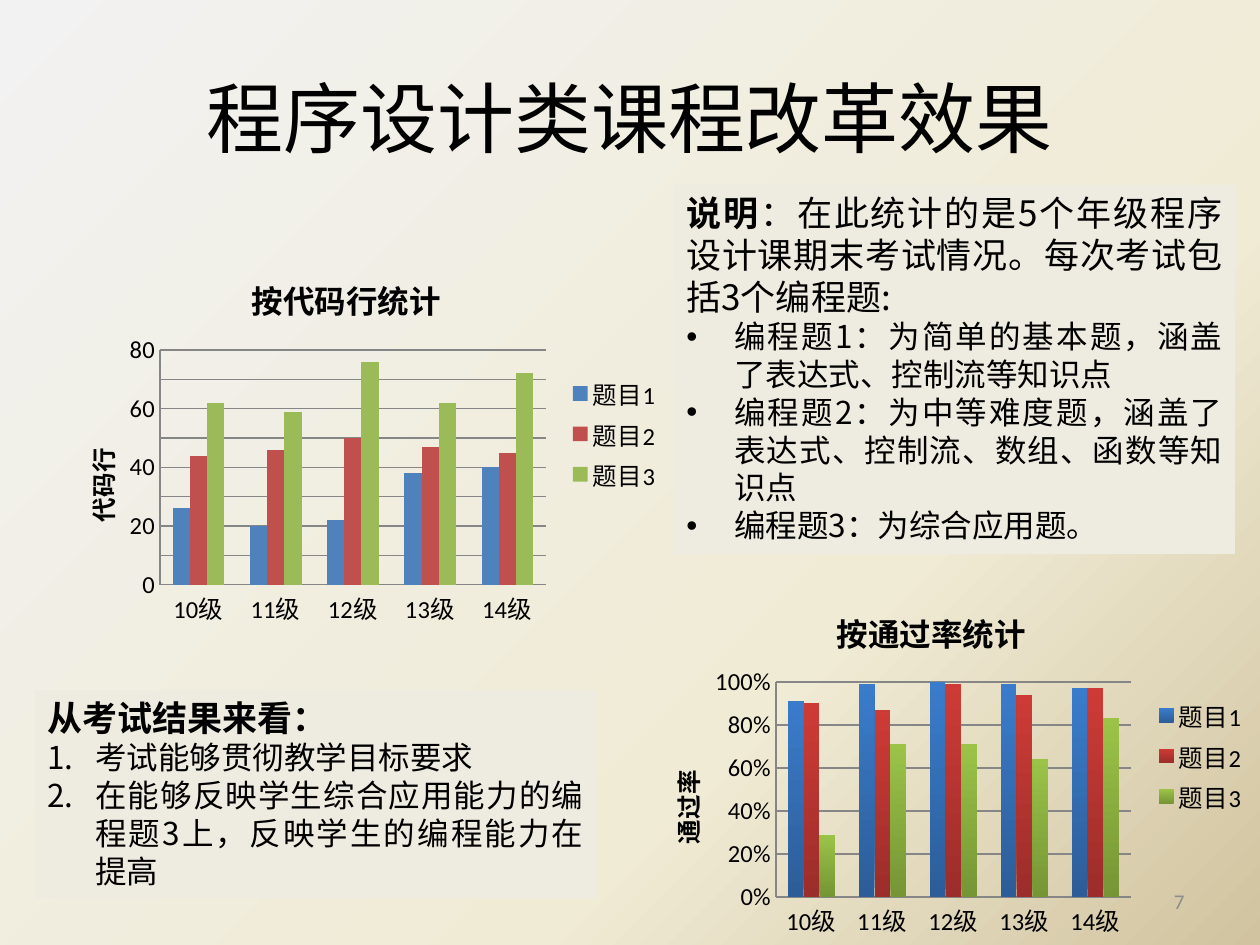
from dataclasses import dataclass

from lxml.etree import SubElement
from pptx import Presentation
from pptx.chart.data import CategoryChartData
from pptx.dml.color import RGBColor
from pptx.enum.chart import XL_CHART_TYPE, XL_LEGEND_POSITION, XL_TICK_MARK
from pptx.enum.lang import MSO_LANGUAGE_ID
from pptx.enum.shapes import MSO_SHAPE
from pptx.enum.text import MSO_ANCHOR, PP_ALIGN
from pptx.oxml import parse_xml
from pptx.oxml.ns import nsdecls, qn
from pptx.util import Inches, Pt

TITLE = ("程序设计类课程改革效果", (63, 38, 1134, 158))
PAGE_NUMBER = ("7", (903, 876, 294, 50))
GRADES = ["10级", "11级", "12级", "13级", "14级"]
TOPICS = ["题目1", "题目2", "题目3"]

CHARTS = [
    dict(title="按代码行统计", axis="代码行", frame=(44, 234, 630, 400),
         plot=(160, 350, 386, 235), title_at=(246, 267), axis_at=(77, 443),
         format="General", top=80, unit=10, gradient=False,
         values=[(26, 20, 22, 38, 40), (44, 46, 50, 47, 45), (62, 59, 76, 62, 72)]),
    dict(title="按通过率统计", axis="通过率", frame=(630, 567, 630, 378),
         plot=(776, 682, 355, 215), title_at=(831, 600), axis_at=(662, 765),
         format="0%", top=1, unit=0.2, gradient=True,
         values=[(0.91, 0.99, 1, 0.99, 0.97), (0.9, 0.87, 0.99, 0.94, 0.97),
                 (0.29, 0.71, 0.71, 0.64, 0.83)]),
]

NOTES = [
    dict(frame=(674, 185, 561, 369), lead="说明", marker="bullet",
         rest="：在此统计的是5个年级程序设计课期末考试情况。每次考试包括3个编程题:",
         items=["编程题1：为简单的基本题，涵盖了表达式、控制流等知识点",
                "编程题2：为中等难度题，涵盖了表达式、控制流、数组、函数等知识点",
                "编程题3：为综合应用题。"]),
    dict(frame=(35, 690, 561, 208), lead="从考试结果来看：", marker="number", rest="",
         items=["考试能够贯彻教学目标要求",
                "在能够反映学生综合应用能力的编程题3上，反映学生的编程能力在提高"]),
]


@dataclass(frozen=True)
class Theme:
    ink: str = "000000"
    muted: str = "8C8C8C"
    grid: str = "868686"
    panel: str = "EEECE1"
    series: tuple = ("4F81BD", "C0504D", "9BBB59")
    shades: tuple = (("2C5D98", "3A7CCB"), ("9B2D2A", "CE3B37"), ("769535", "9BC348"))
    backdrop: tuple = ((0, "F2F2F2"), (67, "F0EBD5"), (100, "D1C39F"))
    latin: str = "Calibri"
    chinese: str = "Noto Sans CJK SC"
    title: int = 44
    lead: int = 20
    item: int = 18
    label: int = 14
    small: int = 12


THEME = Theme()
PX = Inches(1) / 126


def emu(*lengths):
    return [round(length * PX) for length in lengths]


def color(value):
    return RGBColor.from_string(value)


def style(font, size, face=THEME.latin, ink=THEME.ink, bold=False):
    font.size = Pt(size)
    font.bold = bold
    font.color.rgb = color(ink)
    font.name = face


def style_span(span, size, **options):
    style(span.font, size, **options)
    span.font.language_id = MSO_LANGUAGE_ID.SIMPLIFIED_CHINESE
    SubElement(span.font._element, qn("a:ea")).set("typeface", THEME.chinese)


def paint_background(page):
    page.background.fill.gradient()
    old = next(page._element.iter(qn("a:gradFill")))
    stops = "".join(f'<a:gs pos="{place * 1000}"><a:srgbClr val="{value}"/></a:gs>'
                    for place, value in THEME.backdrop)
    new = parse_xml(
        f'<a:gradFill {nsdecls("a")} rotWithShape="1"><a:gsLst>{stops}</a:gsLst>'
        '<a:path path="circle"><a:fillToRect r="100000" b="100000"/></a:path></a:gradFill>')
    old.getparent().replace(old, new)


def add_label(page, content, size, align, ink):
    text, frame = content
    box = page.shapes.add_textbox(*emu(*frame))
    box.text_frame.word_wrap = True
    box.text_frame.vertical_anchor = MSO_ANCHOR.MIDDLE
    para = box.text_frame.paragraphs[0]
    para.text = text
    para.alignment = align
    style_span(para.runs[0], size, ink=ink)


def add_marker(para, marker):
    properties = para._p.get_or_add_pPr()
    indent = Inches(0.38)
    properties.set("marL", str(indent))
    properties.set("indent", str(-indent))
    if marker == "number":
        SubElement(properties, qn("a:buAutoNum")).set("type", "arabicPeriod")
    else:
        SubElement(properties, qn("a:buFont")).set("typeface", "Arial")
        SubElement(properties, qn("a:buChar")).set("char", "•")


def add_note(page, note):
    box = page.shapes.add_shape(MSO_SHAPE.RECTANGLE, *emu(*note["frame"]))
    box.shadow.inherit = False
    box.fill.solid()
    box.fill.fore_color.rgb = color(THEME.panel)
    box.line.fill.background()
    frame = box.text_frame
    frame.word_wrap = True
    frame.vertical_anchor = MSO_ANCHOR.TOP
    frame.text = "\n".join([note["lead"], *note["items"]])
    for para in frame.paragraphs:
        para.alignment = PP_ALIGN.JUSTIFY
    heading, *items = frame.paragraphs
    style_span(heading.runs[0], THEME.lead, face=THEME.chinese, bold=True)
    if note["rest"]:
        span = heading.add_run()
        span.text = note["rest"]
        style_span(span, THEME.lead, face=THEME.chinese)
    for para in items:
        add_marker(para, note["marker"])
        style_span(para.runs[0], THEME.item, face=THEME.chinese)


def place(parent, position, frame, inner=False):
    left, top, width, height = frame
    parts = {"x": (position[0] - left) / width, "y": (position[1] - top) / height}
    if inner:
        parts.update(w=position[2] / width, h=position[3] / height)
    target = '<c:layoutTarget val="inner"/>' if inner else ""
    modes = '<c:xMode val="edge"/><c:yMode val="edge"/>'
    sizes = "".join(f'<c:{key} val="{value:.4f}"/>' for key, value in parts.items())
    layout = parse_xml(f'<c:layout {nsdecls("c")}><c:manualLayout>{target}{modes}{sizes}'
                       '</c:manualLayout></c:layout>')
    for old in parent.findall(qn("c:layout")):
        parent.remove(old)
    text = parent.find(qn("c:tx"))
    parent.insert(0 if text is None else 1, layout)


def add_title(title, text, size, position, frame):
    title.text_frame.text = text
    style_span(title.text_frame.paragraphs[0].runs[0], size, bold=True)
    place(title._element, position, frame)


def add_bar_chart(page, entry):
    data = CategoryChartData(number_format=entry["format"])
    data.categories = GRADES
    for topic, values in zip(TOPICS, entry["values"]):
        data.add_series(topic, values)
    frame = entry["frame"]
    chart = page.shapes.add_chart(XL_CHART_TYPE.COLUMN_CLUSTERED, *emu(*frame), data).chart
    style(chart.font, THEME.item)
    chart.has_title = True
    add_title(chart.chart_title, entry["title"], THEME.item, entry["title_at"], frame)
    chart.has_legend = True
    chart.legend.position = XL_LEGEND_POSITION.RIGHT
    chart.legend.include_in_layout = False
    style(chart.legend.font, THEME.label)

    values = chart.value_axis
    values.minimum_scale = 0
    values.maximum_scale = entry["top"]
    values.major_unit = entry["unit"]
    values.tick_labels.number_format = entry["format"]
    values.tick_labels.number_format_is_linked = False
    values.has_major_gridlines = True
    values.has_title = True
    add_title(values.axis_title, entry["axis"], THEME.label, entry["axis_at"], frame)
    values.axis_title.text_frame._txBody.bodyPr.set("rot", "-5400000")
    values.axis_title.text_frame._txBody.bodyPr.set("vert", "horz")
    for axis in (chart.category_axis, values):
        axis.major_tick_mark = XL_TICK_MARK.NONE
        style(axis.tick_labels.font, THEME.label)
    for line in (values.major_gridlines.format.line, values.format.line,
                 chart.category_axis.format.line):
        line.color.rgb = color(THEME.grid)
        line.width = Pt(0.75)

    plot = chart.plots[0]
    plot.gap_width = 150
    plot.overlap = 0
    plot.vary_by_categories = False
    for series, solid, shades in zip(plot.series, THEME.series, THEME.shades):
        fill = series.format.fill
        if entry["gradient"]:
            fill.gradient()
            fill.gradient_angle = 90
            for stop, shade in zip(fill.gradient_stops, shades):
                stop.color.rgb = color(shade)
        else:
            fill.solid()
            fill.fore_color.rgb = color(solid)
    place(next(chart._chartSpace.iter(qn("c:plotArea"))), entry["plot"], frame, inner=True)


def main():
    deck = Presentation()
    deck.slide_width, deck.slide_height = emu(1260, 945)
    page = deck.slides.add_slide(deck.slide_layouts[6])
    paint_background(page)
    add_label(page, TITLE, THEME.title, PP_ALIGN.CENTER, THEME.ink)
    add_label(page, PAGE_NUMBER, THEME.small, PP_ALIGN.RIGHT, THEME.muted)
    for entry in CHARTS:
        add_bar_chart(page, entry)
    for note in NOTES:
        add_note(page, note)
    deck.save("out.pptx")


if __name__ == "__main__":
    main()
